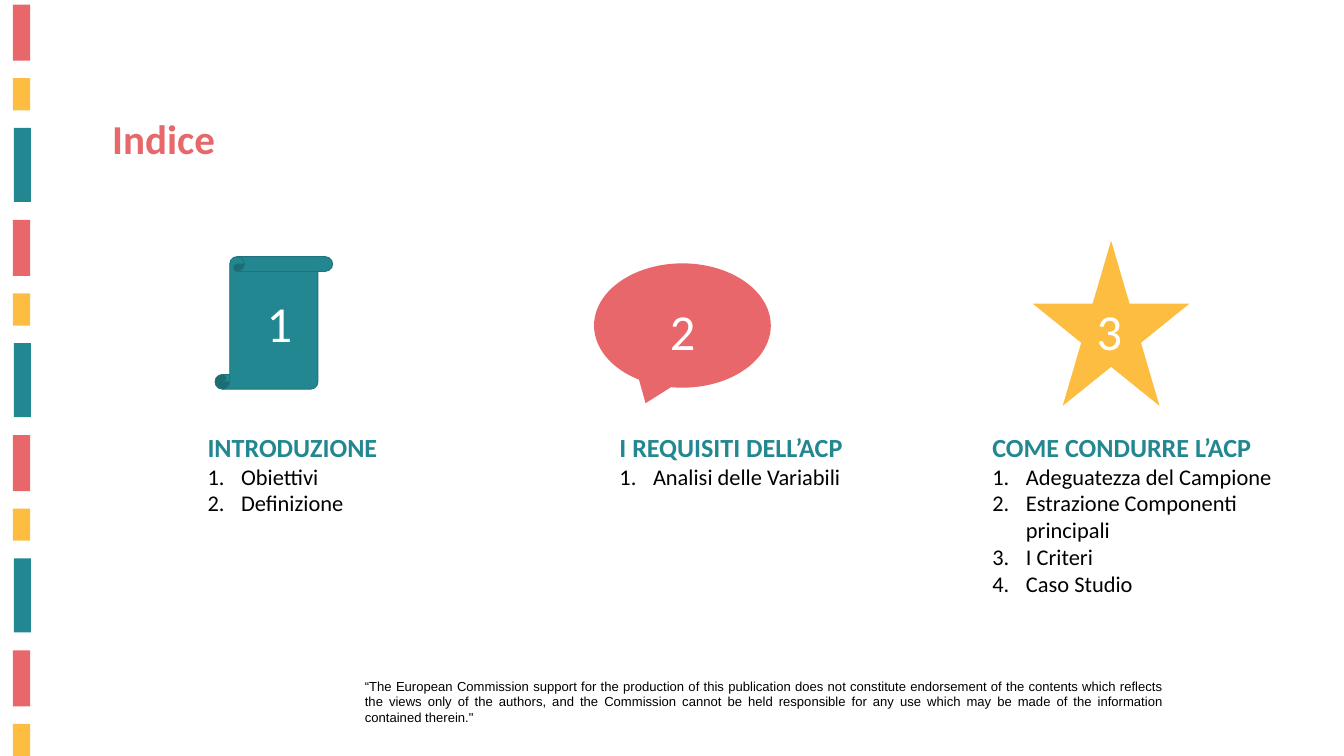
from dataclasses import dataclass

from lxml import etree
from pptx import Presentation
from pptx.dml.color import RGBColor
from pptx.enum.shapes import MSO_SHAPE
from pptx.enum.text import MSO_ANCHOR, MSO_AUTO_SIZE, PP_ALIGN
from pptx.oxml.ns import qn
from pptx.util import Pt

RECTANGLE = MSO_SHAPE.RECTANGLE
SCROLL = MSO_SHAPE.VERTICAL_SCROLL
CALLOUT = MSO_SHAPE.OVAL_CALLOUT
STAR = MSO_SHAPE.STAR_5_POINT
TOP = MSO_ANCHOR.TOP
NO_AUTOFIT = MSO_AUTO_SIZE.NONE
LEFT, JUSTIFY = PP_ALIGN.LEFT, PP_ALIGN.JUSTIFY


@dataclass(frozen=True)
class Theme:
    red: str = "E8676A"
    title_red: str = "E7686A"
    yellow: str = "FDBD40"
    teal: str = "238791"
    dark_teal: str = "1E737C"
    black: str = "000000"
    white: str = "FFFFFF"
    title: int = 44
    number: int = 54
    heading: int = 28
    item: int = 24
    note: int = 14
    font: str = "Calibri"
    note_font: str = "Arial"


theme = Theme()
deck = Presentation()
deck.slide_width, deck.slide_height = Pt(1440), Pt(810)
page = deck.slides.add_slide(deck.slide_layouts[5])


def add_text(text, *, size, color, at=None, box=None, font=theme.font, bold=False,
             align=LEFT, numbered=False):
    """Add a paragraph to a given box, or to a new one placed at the given points."""
    if box is None:
        box = page.shapes.add_textbox(*map(Pt, at))
    frame = box.text_frame
    frame.word_wrap = True
    frame.auto_size = NO_AUTOFIT
    frame.vertical_anchor = TOP
    para = frame.add_paragraph() if frame.text else frame.paragraphs[0]
    para.alignment = align
    if numbered:
        properties = para._p.get_or_add_pPr()
        properties.set("marL", str(Pt(36)))
        properties.set("indent", str(-Pt(36)))
        etree.SubElement(properties, qn("a:buAutoNum"), type="arabicPeriod")
    span = para.add_run()
    span.text = text
    span.font.name = font
    span.font.size = Pt(size)
    span.font.bold = bold
    span.font.color.rgb = RGBColor.from_string(color)
    return box


def add_figure(kind, at, fill, line=None):
    """Add a filled shape, outlined only when a line colour is given."""
    shape = page.shapes.add_shape(kind, *map(Pt, at))
    shape.shadow.inherit = False
    shape.fill.solid()
    shape.fill.fore_color.rgb = RGBColor.from_string(fill)
    if line:
        shape.line.color.rgb = RGBColor.from_string(line)
        shape.line.width = Pt(1)
    else:
        shape.line.fill.background()


# Striped left edge: red, yellow and teal in turn, down to the bottom
stripes = [
    (13.7, 5, 18.7, 60, theme.red),
    (13.7, 83.7, 18.7, 34.5, theme.yellow),
    (15, 137, 18, 79.4, theme.teal),
]
stripe_pitch = 230.6
for cycle in range(4):
    for left, top, width, height, color in stripes:
        stripe_top = top + cycle * stripe_pitch
        if stripe_top < 810:
            add_figure(RECTANGLE, (left, stripe_top, width, height), color)

# Title
title = page.shapes.title
title.left, title.top, title.width, title.height = Pt(113), Pt(118), Pt(487.5), Pt(60.5)
add_text("Indice", box=title, size=theme.title, color=theme.title_red, bold=True)

# Chapters: numbered figure above a heading and its list
chapters = [
    (SCROLL, (230.4, 275, 126, 142), theme.teal, theme.dark_teal,
     (278.6, 309.6, 114, 72.7), (215.3, 458.6, 246.2, 162.7),
     "INTRODUZIONE", ["Obiettivi", "Definizione"]),
    (CALLOUT, (636.5, 282.2, 189.4, 133.2), theme.red, None,
     (710.6, 317.5, 77.8, 72.7), (656.6, 458.6, 303, 99.4),
     "I REQUISITI DELL’ACP", ["Analisi delle Variabili"]),
    (STAR, (1106.6, 257.8, 167.8, 177.1), theme.yellow, None,
     (1167.8, 317.5, 108, 72.7), (1056.2, 458.6, 327.6, 216),
     "COME CONDURRE L’ACP",
     ["Adeguatezza del Campione", "Estrazione Componenti principali",
      "I Criteri", "Caso Studio"]),
]
for number, chapter in enumerate(chapters, 1):
    kind, figure_at, fill, line, number_at, list_at, heading, items = chapter
    add_figure(kind, figure_at, fill, line)
    add_text(str(number), at=number_at, size=theme.number, color=theme.white)
    box = add_text(heading, at=list_at, size=theme.heading, color=theme.teal, bold=True)
    for item in items:
        add_text(item, box=box, size=theme.item, color=theme.black, numbered=True)

# Funding note
add_text("“The European Commission support for the production of this publication does not "
         "constitute endorsement of the contents which reflects the views only of the authors, "
         "and the Commission cannot be held responsible for any use which may be made of the "
         "information contained therein.\"",
         at=(383.8, 722.9, 869.8, 58.3), size=theme.note, color=theme.black,
         font=theme.note_font, align=JUSTIFY)

deck.save("out.pptx")
